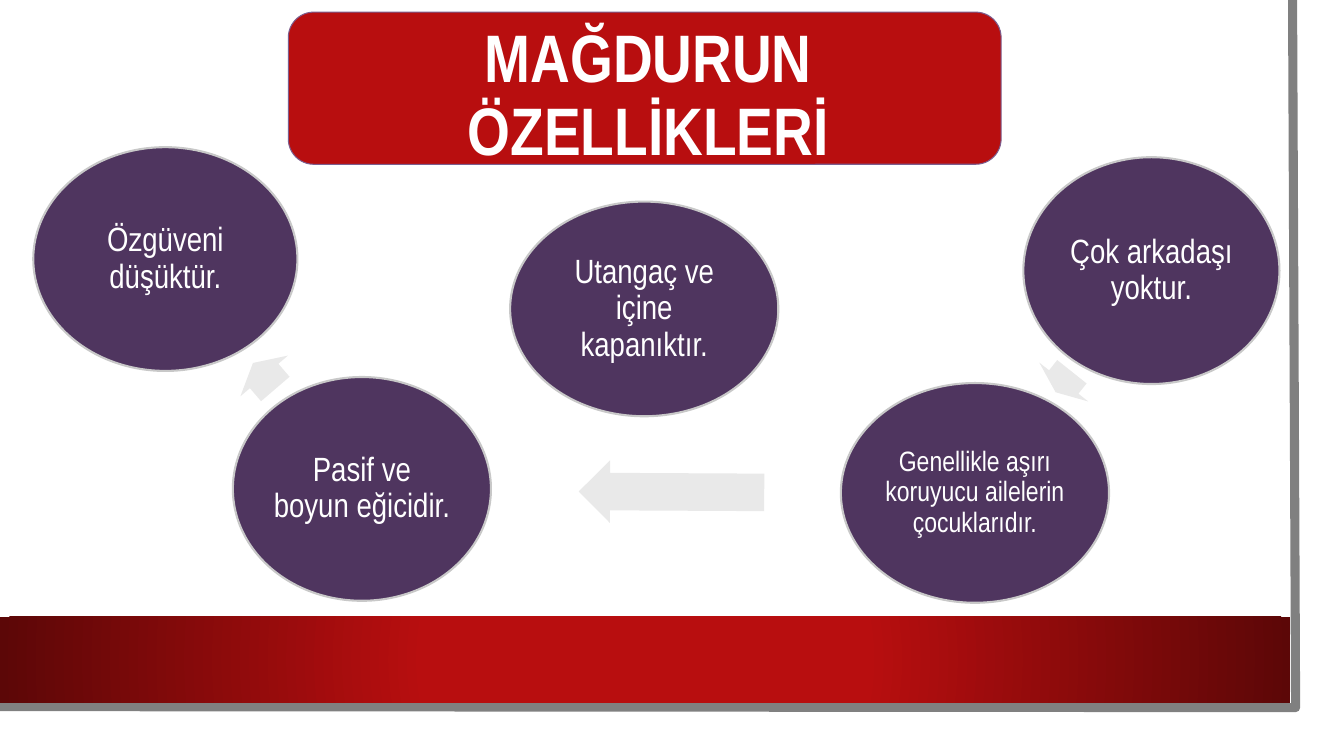
from dataclasses import dataclass

from lxml.etree import SubElement
from pptx import Presentation
from pptx.dml.color import RGBColor
from pptx.enum.shapes import MSO_SHAPE
from pptx.enum.text import MSO_ANCHOR, MSO_AUTO_SIZE, PP_ALIGN
from pptx.oxml.ns import qn
from pptx.util import Pt

PX = 9144  # EMU per px, 100 px to the inch


@dataclass(frozen=True)
class Theme:
    font: str = "Arial Narrow"
    title_size: int = 48
    trait_size: int = 24
    long_trait_size: int = 20
    white: RGBColor = RGBColor(0xFF, 0xFF, 0xFF)
    red: RGBColor = RGBColor(0xB8, 0x0E, 0x0F)
    dark_red: RGBColor = RGBColor(0x5C, 0x07, 0x07)
    purple: RGBColor = RGBColor(0x4F, 0x35, 0x5F)
    title_line: RGBColor = RGBColor(0x7C, 0x5E, 0x8F)
    trait_line: RGBColor = RGBColor(0xC8, 0xC8, 0xC8)
    arrow: RGBColor = RGBColor(0xE9, 0xE9, 0xE9)
    edge: RGBColor = RGBColor(0x80, 0x80, 0x80)


THEME = Theme()

# Box (left, top, width, height), text, type size
TRAITS = [
    ((506, 200, 266, 213), "Utangaç ve içine kapanıktır.", THEME.trait_size),
    ((1015, 156, 254, 225), "Çok arkadaşı yoktur.", THEME.trait_size),
    ((834, 380, 266, 218), "Genellikle aşırı koruyucu ailelerin çocuklarıdır.",
     THEME.long_trait_size),
    ((231, 374, 256, 222), "Pasif ve boyun eğicidir.", THEME.trait_size),
    ((33, 146, 262, 222), "Özgüveni düşüktür.", THEME.trait_size),
]

# Box, rotation in degrees
ARROWS = [
    ((1042, 348, 26, 62), 128.5),
    ((574, 457, 184, 62), 180.3),
    ((245, 342, 34, 62), 229.4),
]


def emu(box):
    return [length * PX for length in box]


def add_filled(slide, preset, box, fill, line=None, line_width=0):
    shape = slide.shapes.add_shape(preset, *emu(box))
    shape.shadow.inherit = False
    shape.fill.solid()
    shape.fill.fore_color.rgb = fill
    if line is None:
        shape.line.fill.background()
    else:
        shape.line.color.rgb = line
        shape.line.width = Pt(line_width)
    return shape


def write_centred(shape, text, size, inset, bold=False):
    frame = shape.text_frame
    frame.text = text
    frame.word_wrap = True
    frame.auto_size = MSO_AUTO_SIZE.NONE
    frame.vertical_anchor = MSO_ANCHOR.MIDDLE
    frame.margin_left = frame.margin_right = inset * PX
    frame.margin_top = frame.margin_bottom = inset * PX
    paragraph = frame.paragraphs[0]
    paragraph.alignment = PP_ALIGN.CENTER
    paragraph.line_spacing = 0.9
    font = paragraph.font
    font.name, font.size, font.bold = THEME.font, Pt(size), bold
    font.color.rgb = THEME.white


def add_page_edge(slide, box):
    """Grey line along the right and bottom sides of the page."""
    left, top, width, height = box
    builder = slide.shapes.build_freeform(left + width - 3, top, scale=PX)
    builder.add_line_segments(
        [(left + width, top + height), (left, top + height - 1)], close=False)
    edge = builder.convert_to_shape()
    edge.shadow.inherit = False
    edge.fill.background()
    edge.line.color.rgb = THEME.edge
    edge.line.width = Pt(6.5)


def add_footer_band(slide, box):
    """Red band that darkens outwards from its centre."""
    band = add_filled(slide, MSO_SHAPE.RECTANGLE, box, THEME.red)
    band.fill.gradient()
    stops = zip(band.fill.gradient_stops, (0.34, 1), (THEME.red, THEME.dark_red))
    for stop, position, color in stops:
        stop.position = position
        stop.color.rgb = color
    gradient = band._element.spPr.find(qn("a:gradFill"))
    gradient.remove(gradient.find(qn("a:lin")))
    circle = SubElement(gradient, qn("a:path"), {"path": "circle"})
    SubElement(circle, qn("a:fillToRect"), dict.fromkeys("ltrb", "50000"))


def add_trait(slide, box, text, size):
    oval = add_filled(slide, MSO_SHAPE.OVAL, box, THEME.purple, THEME.trait_line, 1.5)
    write_centred(oval, text, size, inset=3)


def add_arrow(slide, box, rotation):
    arrow = add_filled(slide, MSO_SHAPE.RIGHT_ARROW, box, THEME.arrow)
    arrow.adjustments[0] = 0.6
    arrow.adjustments[1] = 0.5
    arrow.rotation = rotation


def add_title(slide, box, text):
    add_filled(slide, MSO_SHAPE.ROUNDED_RECTANGLE, box, THEME.red, THEME.title_line, 0.75)
    left, top, width, height = box
    title = slide.shapes.title
    title.left, title.top, title.width, title.height = emu(
        (left + 8, top + 25, width - 9, height - 32))
    write_centred(title, text, THEME.title_size, inset=15, bold=True)
    slide.shapes._spTree.append(title._element)  # bring in front of its panel


def main():
    presentation = Presentation()
    presentation.slide_width, presentation.slide_height = emu((1333, 750))
    slide = presentation.slides.add_slide(presentation.slide_layouts[5])
    add_page_edge(slide, (-3, 0, 1288, 702))
    add_footer_band(slide, (0, 612, 1280, 85))
    for box, rotation in ARROWS:
        add_arrow(slide, box, rotation)
    for box, text, size in TRAITS:
        add_trait(slide, box, text, size)
    add_title(slide, (286, 12, 707, 151), "MAĞDURUN ÖZELLİKLERİ")
    presentation.save("out.pptx")


if __name__ == "__main__":
    main()
